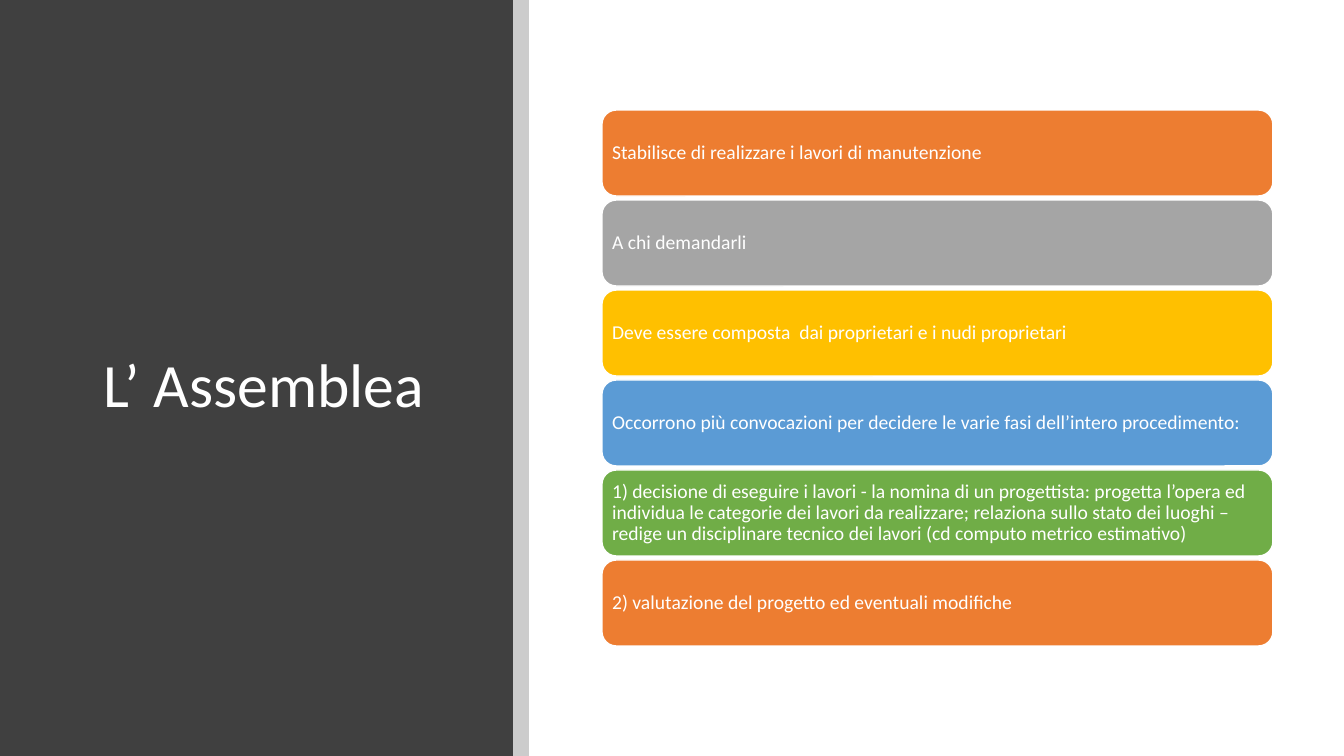
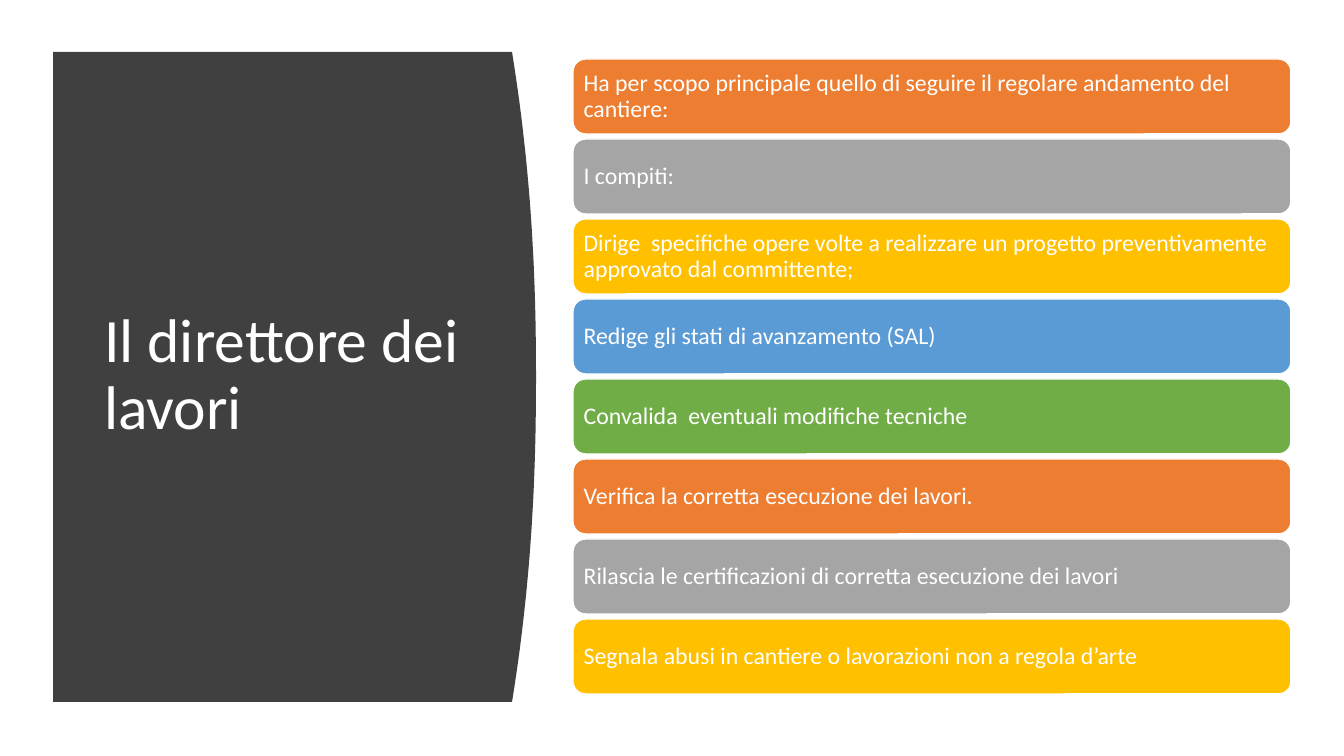
from itertools import cycle

from lxml import etree
from pptx import Presentation
from pptx.dml.color import RGBColor
from pptx.enum.shapes import MSO_SHAPE
from pptx.enum.text import MSO_ANCHOR, MSO_AUTO_SIZE, PP_ALIGN
from pptx.oxml.ns import qn
from pptx.util import Emu, Pt

RECT, ROUND_RECT = MSO_SHAPE.RECTANGLE, MSO_SHAPE.ROUNDED_RECTANGLE
MIDDLE, LEFT = MSO_ANCHOR.MIDDLE, PP_ALIGN.LEFT
TITLE_ONLY = 5

WIDTH, HEIGHT = 1344, 756
EMU_PER_PX = 914400 / 100.8
FONT = "Calibri"
WHITE, DARK, BLACK = "FFFFFF", "404040", "000000"
BAR_COLORS = ["ED7D31", "A5A5A5", "FFC000", "5B9BD5", "70AD47"]

ASSEMBLY = {
    "title": "L’ Assemblea",
    "title_box": (93, 90, 368, 596),
    "bars": dict(left=602, top=110, width=671, height=86, pitch=90, inset=6, size=14),
    "items": [
        "Stabilisce di realizzare i lavori di manutenzione",
        "A chi demandarli",
        "Deve essere composta  dai proprietari e i nudi proprietari",
        "Occorrono più convocazioni per decidere le varie fasi dell’intero procedimento:",
        "1) decisione di eseguire i lavori - la nomina di un progettista: progetta l’opera ed "
        "individua le categorie dei lavori da realizzare; relaziona sullo stato dei luoghi – "
        "redige un disciplinare tecnico dei lavori (cd computo metrico estimativo)",
        "2) valutazione del progetto ed eventuali modifiche",
    ],
}
DIRECTOR = {
    "title": "Il direttore dei lavori",
    "title_box": (94, 112, 377, 528),
    "bars": dict(left=573, top=59, width=718, height=75, pitch=80, inset=7, size=17),
    "items": [
        "Ha per scopo principale quello di seguire il regolare andamento del cantiere:",
        "I compiti:",
        "Dirige  specifiche opere volte a realizzare un progetto preventivamente "
        "approvato dal committente;",
        "Redige gli stati di avanzamento (SAL)",
        "Convalida  eventuali modifiche tecniche",
        "Verifica la corretta esecuzione dei lavori.",
        "Rilascia le certificazioni di corretta esecuzione dei lavori",
        "Segnala abusi in cantiere o lavorazioni non a regola d’arte",
    ],
}


def px(n):
    return Emu(round(n * EMU_PER_PX))


def rgb(color):
    return RGBColor.from_string(color)


def paint(sp, fill, line=None):
    sp.shadow.inherit = False
    sp.fill.solid()
    sp.fill.fore_color.rgb = rgb(fill)
    if line:
        sp.line.color.rgb = rgb(line)
        sp.line.width = Pt(1)
    else:
        sp.line.fill.background()


def add_box(s, kind, box, fill, line=None):
    sp = s.shapes.add_shape(kind, *map(px, box))
    paint(sp, fill, line)
    return sp


def write(sp, text, size):
    """Fill a shape with white, left-aligned, vertically centred text."""
    tf = sp.text_frame
    tf.text = text
    tf.word_wrap = True
    tf.auto_size = MSO_AUTO_SIZE.NONE
    tf.vertical_anchor = MIDDLE
    p = tf.paragraphs[0]
    p.alignment = LEFT
    p.line_spacing = 0.9
    font = p.runs[0].font
    font.name, font.size, font.color.rgb = FONT, Pt(size), rgb(WHITE)


def add_bars(s, items, left, top, width, height, pitch, inset, size):
    for i, (text, color) in enumerate(zip(items, cycle(BAR_COLORS))):
        bar = add_box(s, ROUND_RECT, (left, top + i * pitch, width, height), color, WHITE)
        write(bar, text, size)
        tf = bar.text_frame
        tf.margin_left = tf.margin_right = tf.margin_top = tf.margin_bottom = px(inset)


def add_straight_panel(s):
    panel = add_box(s, RECT, (0, 0, 513, HEIGHT), DARK)
    strip = add_box(s, RECT, (513, 0, 16, HEIGHT), BLACK)
    clr = strip.element.spPr.find(qn("a:solidFill"))[0]
    etree.SubElement(clr, qn("a:alpha"), val="20000")
    return [panel, strip]


def add_curved_panel(s):
    """Dark panel whose right side bulges outwards."""
    left, top, right, bottom = 53, 52, 512, 702
    bulge, power, steps = 24, 2.2, 48
    points = [(left, top)]
    for i in range(steps + 1):
        t = i / steps
        points.append((right + bulge * (1 - abs(2 * t - 1) ** power),
                       top + t * (bottom - top)))
    points.append((left, bottom))
    outline = [(px(x), px(y)) for x, y in points]
    builder = s.shapes.build_freeform(*outline[0])
    builder.add_line_segments(outline[1:], close=True)
    panel = builder.convert_to_shape()
    paint(panel, DARK)
    return [panel]


def add_slide(prs, content, add_panel):
    s = prs.slides.add_slide(prs.slide_layouts[TITLE_ONLY])
    title = s.shapes.title
    title.left, title.top, title.width, title.height = map(px, content["title_box"])
    write(title, content["title"], 44)
    for sp in add_panel(s):
        title.element.addprevious(sp.element)  # keep the panel behind the title
    add_bars(s, content["items"], **content["bars"])


def main():
    prs = Presentation()
    prs.slide_width, prs.slide_height = px(WIDTH), px(HEIGHT)
    add_slide(prs, ASSEMBLY, add_straight_panel)
    add_slide(prs, DIRECTOR, add_curved_panel)
    prs.save("out.pptx")


if __name__ == "__main__":
    main()
